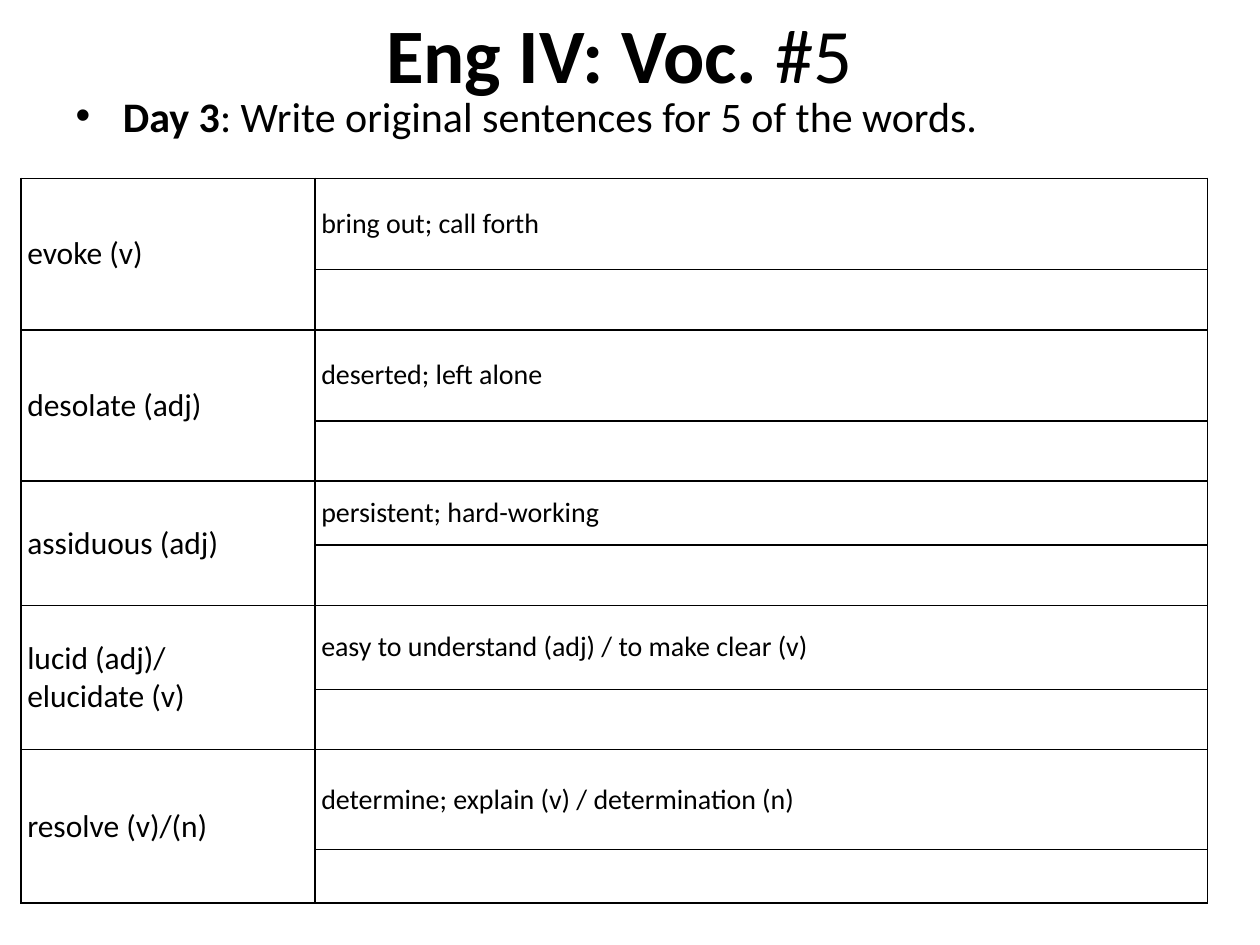
import pptx
import pptx.dml.color
import pptx.enum.text
import pptx.oxml
import pptx.oxml.ns
import pptx.util

Pt = pptx.util.Pt
MID = pptx.enum.text.MSO_ANCHOR.MIDDLE
INK = "000000"

WORDS = [
    ("evoke (v)", "bring out; call forth"),
    ("desolate (adj)", "deserted; left alone"),
    ("assiduous (adj)", "persistent; hard-working"),
    ("lucid (adj)/\nelucidate (v)", "easy to understand (adj) / to make clear (v)"),
    ("resolve (v)/(n)", "determine; explain (v) / determination (n)"),
]
# Height of the meaning row and of the blank row below it
PAIRS = [(52, 34.5), (52, 34.5), (36.5, 34.5), (48, 34.5), (57, 30.5)]
COLS = (168, 510)


def paint(fmt, color):
    fmt.fill.solid()
    fmt.fill.fore_color.rgb = pptx.dml.color.RGBColor.from_string(color)


def assign(item, values):
    for name, value in values.items():
        setattr(item, name, value)


def style(run, size, bold=False):
    assign(run.font, {"name": "Calibri", "size": Pt(size), "bold": bold})
    paint(run.font, INK)


def place(shape, box):
    names = ("left", "top", "width", "height")
    assign(shape, dict(zip(names, map(Pt, box))))


def write(shape, box, parts, size, form):
    """Fill a placeholder with one line of (text, bold) parts."""
    place(shape, box)
    frame = shape.text_frame
    assign(frame, {"word_wrap": True,
                   "auto_size": pptx.enum.text.MSO_AUTO_SIZE.NONE, **form})
    for text, bold in parts:
        run = frame.paragraphs[0].add_run()
        run.text = text
        style(run, size, bold)


def border(cell, color):
    props = cell._tc.get_or_add_tcPr()
    for spot, side in enumerate("LRTB"):
        line = pptx.oxml.parse_xml(
            f'<a:ln{side} {pptx.oxml.ns.nsdecls("a")} w="{Pt(1)}">'
            f'<a:solidFill><a:srgbClr val="{color}"/></a:solidFill></a:ln{side}>')
        props.insert(spot, line)


def fill_cell(cell, text, size):
    cell.text = text
    for para in cell.text_frame.paragraphs:
        for run in para.runs:
            style(run, size)


def add_words(slide, box):
    rows = [height for pair in PAIRS for height in pair]
    frame = slide.shapes.add_table(len(rows), len(COLS), *map(Pt, box))
    table = frame.table
    assign(table, {"first_row": False, "horz_banding": False})
    for col, width in zip(table.columns, COLS):
        col.width = Pt(width)
    for row, height in zip(table.rows, rows):
        row.height = Pt(height)

    # Plain ruled cells
    for cell in table.iter_cells():
        assign(cell, {"margin_left": Pt(3.6), "margin_right": Pt(3.6),
                      "margin_top": 0, "margin_bottom": 0,
                      "vertical_anchor": MID})
        cell.fill.background()
        border(cell, INK)

    # Each word spans its meaning and a blank row
    for i, (word, meaning) in enumerate(WORDS):
        top = 2 * i
        table.cell(top, 0).merge(table.cell(top + 1, 0))
        fill_cell(table.cell(top, 0), word, 18)
        fill_cell(table.cell(top, 1), meaning, 16)


def main():
    deck = pptx.Presentation()
    assign(deck, {"slide_width": Pt(720), "slide_height": Pt(540)})
    slide = deck.slides.add_slide(deck.slide_layouts[1])
    paint(slide.background, "FFFFFF")

    # Heading and task
    write(slide.shapes.title, (30, 0, 648, 60),
          [("Eng IV: Voc. ", True), ("#5", False)], 44,
          {"vertical_anchor": MID})
    write(slide.placeholders[1], (36, 48, 648, 36),
          [("Day 3", True),
           (": Write original sentences for 5 of the words.", False)], 24, {})

    # Word list
    add_words(slide, (12, 102, 678, 414))
    deck.save("out.pptx")


if __name__ == "__main__":
    main()
